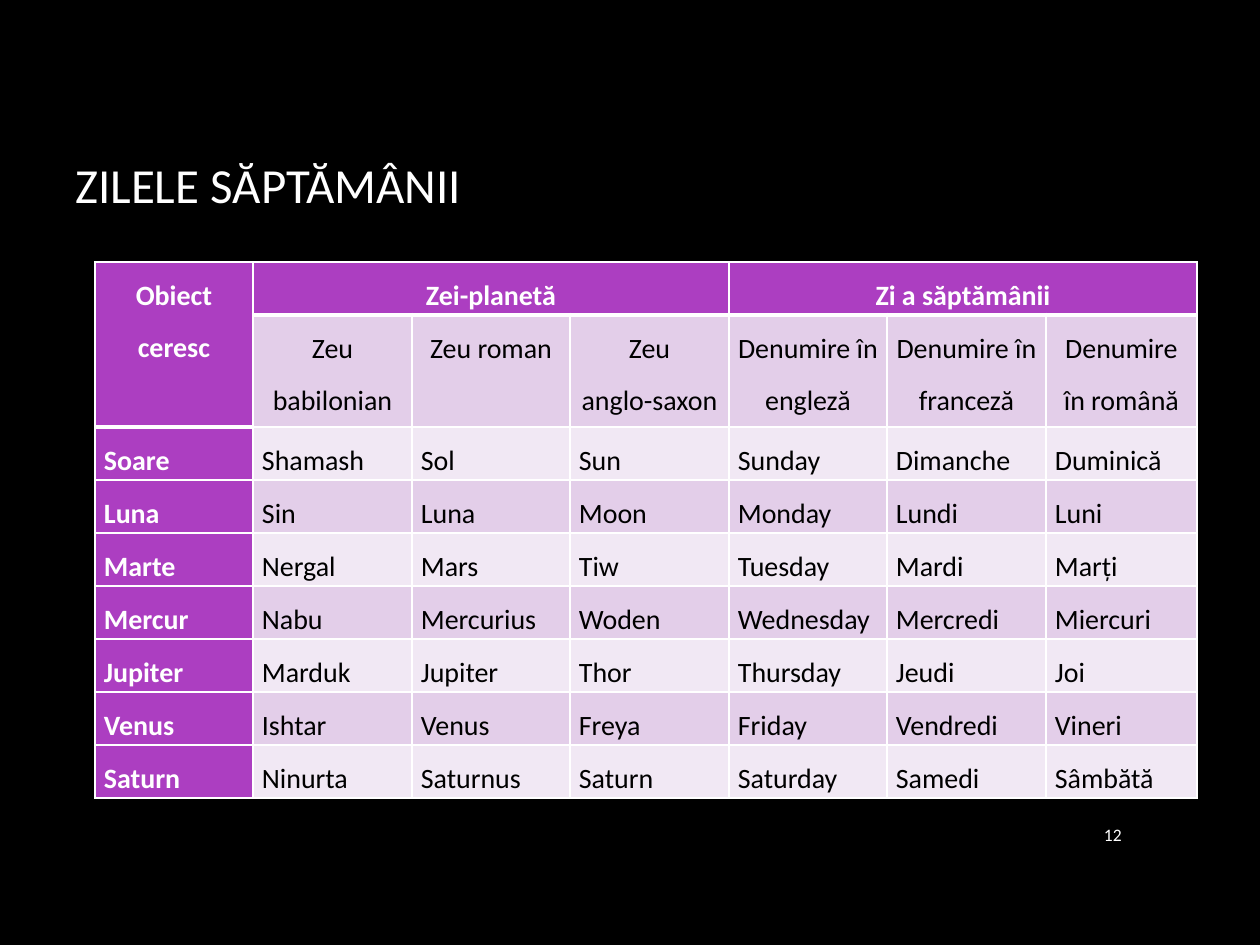
from lxml.etree import SubElement as Sub
from pptx import Presentation
from pptx.dml.color import RGBColor as RGB
from pptx.enum.text import MSO_ANCHOR as Anchor, PP_ALIGN as Align
from pptx.oxml.ns import qn
from pptx.util import Emu, Pt

SCALE = 914400 / 126
HUES = {"back": "000000", "white": "FFFFFF", "ink": "000000",
        "head": "AC3EC1", "dark": "E3CEE9", "pale": "F1E8F4"}


def px(num):
    return Emu(round(num * SCALE))


def put(frame, text, size=16, hue="white", bold=False, align=Align.LEFT, lead=1.0):
    frame.word_wrap = True
    for i, line in enumerate(text.split("\n")):
        para = frame.add_paragraph() if i else frame.paragraphs[0]
        para.alignment, para.line_spacing = align, lead
        run = para.add_run()
        run.text = line
        font = run.font
        font.name, font.size, font.bold = "Calibri", Pt(size), bold
        font.color.rgb = RGB.from_string(HUES[hue])


# Slide
deck = Presentation()
deck.slide_width, deck.slide_height = px(1260), px(945)
slide = deck.slides.add_slide(deck.slide_layouts[6])
slide.background.fill.solid()
slide.background.fill.fore_color.rgb = RGB.from_string(HUES["back"])

# Title and page number
for text, area, size, align in [
    ("ZILELE SĂPTĂMÂNII", (63, 84, 1071, 200), 28, Align.LEFT),
    ("12", (1076, 809, 58, 52), 10, Align.RIGHT),
]:
    frame = slide.shapes.add_textbox(*map(px, area)).text_frame
    frame.vertical_anchor = Anchor.MIDDLE
    put(frame, text, size=size, align=align)

# Table data
rows = [
    ["Obiect ceresc", "Zei-planetă", "", "", "Zi a săptămânii", "", ""],
    ["", "Zeu babilonian", "Zeu roman", "Zeu\nanglo-saxon",
     "Denumire în engleză", "Denumire în franceză", "Denumire în română"],
    ["Soare", "Shamash", "Sol", "Sun", "Sunday", "Dimanche", "Duminică"],
    ["Luna", "Sin", "Luna", "Moon", "Monday", "Lundi", "Luni"],
    ["Marte", "Nergal", "Mars", "Tiw", "Tuesday", "Mardi", "Marți"],
    ["Mercur", "Nabu", "Mercurius", "Woden", "Wednesday", "Mercredi", "Miercuri"],
    ["Jupiter", "Marduk", "Jupiter", "Thor", "Thursday", "Jeudi", "Joi"],
    ["Venus", "Ishtar", "Venus", "Freya", "Friday", "Vendredi", "Vineri"],
    ["Saturn", "Ninurta", "Saturnus", "Saturn", "Saturday", "Samedi", "Sâmbătă"],
]
wide = [158, 159] * 3 + [151]
high = [53, 112] + [53] * 7

# Table grid
table = slide.shapes.add_table(len(rows), len(wide), px(95), px(262),
                               px(sum(wide)), px(sum(high))).table
table.first_row = table.horz_banding = False
for col, size in zip(table.columns, wide):
    col.width = px(size)
for row, size in zip(table.rows, high):
    row.height = px(size)
for top, left, low, right in [(0, 0, 1, 0), (0, 1, 0, 3), (0, 4, 0, 6)]:
    table.cell(top, left).merge(table.cell(low, right))

# Cells
for r, row in enumerate(rows):
    for c, text in enumerate(row):
        cell = table.cell(r, c)
        cell.margin_left = cell.margin_right = px(9)
        cell.margin_top = cell.margin_bottom = 0
        head = r == 0 or c == 0

        # White borders, thick below the header
        thick = {"lnT": (r == 1 and c > 0) or (r, c) == (2, 0),
                 "lnB": r == 0 or (r, c) == (1, 0)}
        props = cell._tc.get_or_add_tcPr()
        for side in ("lnL", "lnR", "lnT", "lnB"):
            edge = Sub(props, qn("a:" + side), w=str(Pt(3 if thick.get(side) else 1)))
            Sub(Sub(edge, qn("a:solidFill")), qn("a:srgbClr"), val=HUES["white"])

        cell.fill.solid()
        tone = "head" if head else "dark" if r % 2 else "pale"
        cell.fill.fore_color.rgb = RGB.from_string(HUES[tone])
        if text:
            put(cell.text_frame, text, hue="white" if head else "ink", bold=head,
                align=Align.CENTER if r < 2 else Align.JUSTIFY, lead=1.5)

deck.save("out.pptx")
